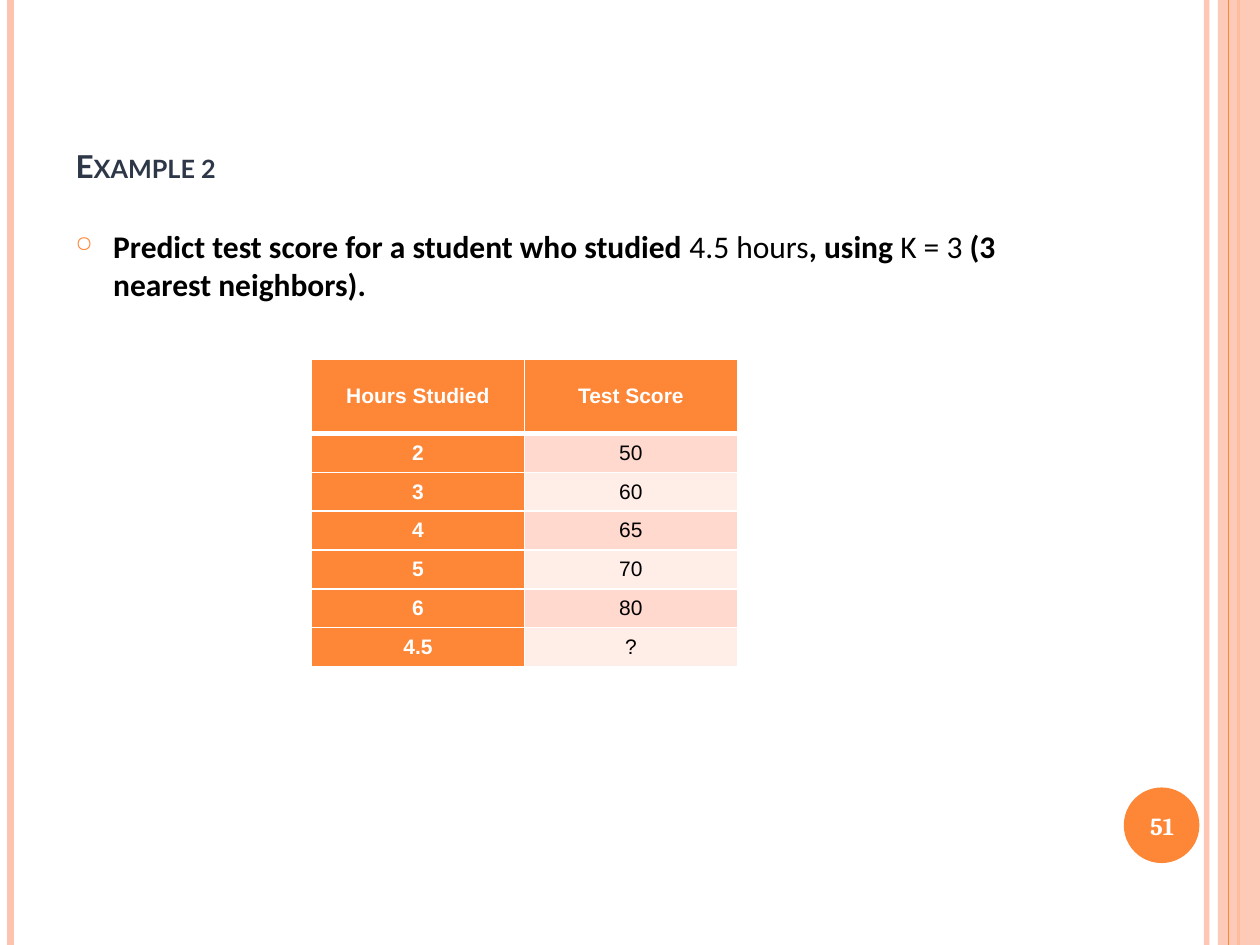
from lxml.etree import SubElement
from pptx import Presentation
from pptx.dml.color import RGBColor
from pptx.enum.shapes import MSO_CONNECTOR, MSO_SHAPE
from pptx.enum.text import MSO_ANCHOR, MSO_AUTO_SIZE, PP_ALIGN
from pptx.oxml.ns import qn
from pptx.util import Pt

COLORS = {
    "accent": "FE8637",
    "peach": "FEC3AE",
    "band_dark": "FFD9CE",
    "band_light": "FFEDE8",
    "title": "2D3748",
    "title_end": "575F6D",
    "white": "FFFFFF",
    "black": "000000",
}
SLIDE_WIDTH, SLIDE_HEIGHT = 720, 540
SCORES = [
    ("Hours Studied", "Test Score"),
    ("2", "50"),
    ("3", "60"),
    ("4", "65"),
    ("5", "70"),
    ("6", "80"),
    ("4.5", "?"),
]


def rgb(name):
    return RGBColor.from_string(COLORS[name])


def style_font(font, face, size, color, bold):
    font.name, font.size, font.bold = face, Pt(size), bold
    font.color.rgb = rgb(color)


def set_opacity(fill_owner, percent):
    color = next(fill_owner.iter(qn("a:srgbClr")))
    SubElement(color, qn("a:alpha"), val=str(percent * 1000))


def add_stripe(slide, x, color, width):
    """Draw a vertical line over the full slide height."""
    stripe = slide.shapes.add_connector(
        MSO_CONNECTOR.STRAIGHT, Pt(x), 0, Pt(x), Pt(SLIDE_HEIGHT))
    stripe.line.color.rgb = rgb(color)
    stripe.line.width = Pt(width)
    SubElement(stripe.element.spPr, qn("a:effectLst"))
    return stripe


def add_solid(slide, preset, box, color):
    solid = slide.shapes.add_shape(preset, *map(Pt, box))
    solid.shadow.inherit = False
    solid.fill.solid()
    solid.fill.fore_color.rgb = rgb(color)
    solid.line.fill.background()
    return solid


def add_side_bands(slide):
    right_stripe = add_stripe(slide, 689.5, "peach", 3)
    set_opacity(right_stripe.element.spPr, 93)
    add_stripe(slide, 6, "peach", 4.5)
    add_stripe(slide, 707.8, "accent", 1.5)
    band = add_solid(slide, MSO_SHAPE.RECTANGLE,
                     (696, 0, SLIDE_WIDTH - 696, SLIDE_HEIGHT), "peach")
    set_opacity(band.element.spPr, 87)
    add_stripe(slide, 702, "accent", 0.75)


def add_page_badge(slide, left, top, diameter):
    add_solid(slide, MSO_SHAPE.OVAL, (left, top, diameter, diameter), "accent")
    page_number = slide.shapes.add_textbox(
        Pt(left - 2.2), Pt(top + 1.4), Pt(diameter + 5), Pt(diameter - 2.2))
    frame = page_number.text_frame
    frame.word_wrap = True
    frame.vertical_anchor = MSO_ANCHOR.MIDDLE
    paragraph = frame.paragraphs[0]
    paragraph.text = "51"
    paragraph.alignment = PP_ALIGN.CENTER
    style_font(paragraph.font, "Cambria", 14, "white", True)


def place_title(slide, left, top, width, height):
    title = slide.shapes.title
    title.left, title.top, title.width, title.height = map(
        Pt, (left, top, width, height))
    frame = title.text_frame
    frame.auto_size = MSO_AUTO_SIZE.NONE
    frame.vertical_anchor = MSO_ANCHOR.BOTTOM
    paragraph = frame.paragraphs[0]
    paragraph.alignment = PP_ALIGN.LEFT
    heading = paragraph.add_run()
    heading.text = "Example 2"
    style_font(heading.font, "Lato", 18, "title", True)
    heading.font._element.set("cap", "small")
    ending = paragraph.add_run()
    ending.text = " "
    style_font(ending.font, "Cambria", 30, "title_end", False)


def add_task(slide, left, top, width, height):
    task = slide.shapes.add_textbox(*map(Pt, (left, top, width, height)))
    frame = task.text_frame
    frame.word_wrap = True
    paragraph = frame.paragraphs[0]
    paragraph.space_before = Pt(6)
    properties = paragraph._p.get_or_add_pPr()
    properties.set("marL", str(Pt(21.6)))
    properties.set("indent", str(Pt(-21.6)))
    bullet_color = SubElement(properties, qn("a:buClr"))
    SubElement(bullet_color, qn("a:srgbClr"), val=COLORS["accent"])
    SubElement(properties, qn("a:buSzPct"), val="70000")
    SubElement(properties, qn("a:buChar"), char="○")
    phrases = [
        ("Predict test score for a student who studied ", True),
        ("4.5 hours", False),
        (", using ", True),
        ("K = 3", False),
        (" (3 nearest neighbors).", True),
    ]
    for words, bold in phrases:
        run = paragraph.add_run()
        run.text = words
        style_font(run.font, "Calibri", 18, "black", bold)


def set_border(cell, side, width):
    border = SubElement(cell._tc.get_or_add_tcPr(), qn(f"a:ln{side}"),
                        w=str(Pt(width)))
    fill = SubElement(border, qn("a:solidFill"))
    SubElement(fill, qn("a:srgbClr"), val=COLORS["white"])


def format_cell(cell, text, row, column):
    is_header = row == 0
    is_label = is_header or column == 0
    cell.text = text
    cell.vertical_anchor = MSO_ANCHOR.MIDDLE
    cell.margin_left = cell.margin_right = Pt(0.75)
    cell.margin_top = cell.margin_bottom = Pt(0.75)
    paragraph = cell.text_frame.paragraphs[0]
    paragraph.alignment = PP_ALIGN.CENTER
    style_font(paragraph.font, "Arial", 12,
               "white" if is_label else "black", is_label)
    thick_side = {0: "B", 1: "T"}.get(row)
    for side in "LRTB":
        set_border(cell, side, 3 if side == thick_side else 1)
    band = "band_dark" if row % 2 else "band_light"
    cell.fill.solid()
    cell.fill.fore_color.rgb = rgb("accent" if is_label else band)


def add_score_table(slide, left, top, width, header_height, row_height):
    height = header_height + row_height * (len(SCORES) - 1)
    table = slide.shapes.add_table(
        len(SCORES), 2, *map(Pt, (left, top, width, height))).table
    table.first_col = True
    for row, values in enumerate(SCORES):
        table.rows[row].height = Pt(row_height if row else header_height)
        for column, text in enumerate(values):
            format_cell(table.cell(row, column), text, row, column)


def main():
    presentation = Presentation()
    presentation.slide_width = Pt(SLIDE_WIDTH)
    presentation.slide_height = Pt(SLIDE_HEIGHT)
    slide = presentation.slides.add_slide(presentation.slide_layouts[5])
    add_side_bands(slide)
    place_title(slide, 36, 21.6, 588, 90)
    add_task(slide, 36, 126, 588, 384)
    add_score_table(slide, 178, 205.2, 243.4, 42.5, 22.2)
    add_page_badge(slide, 642.2, 450, 43.2)
    presentation.save("out.pptx")


if __name__ == "__main__":
    main()
